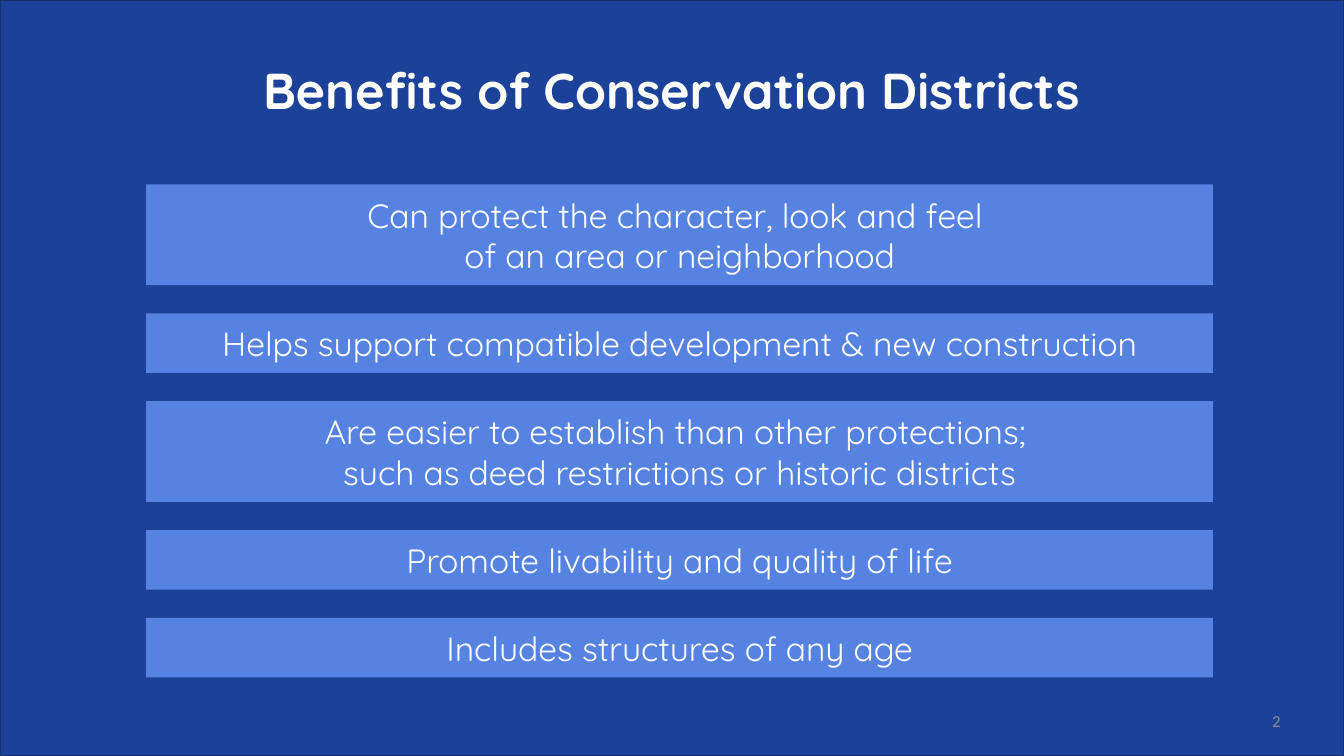
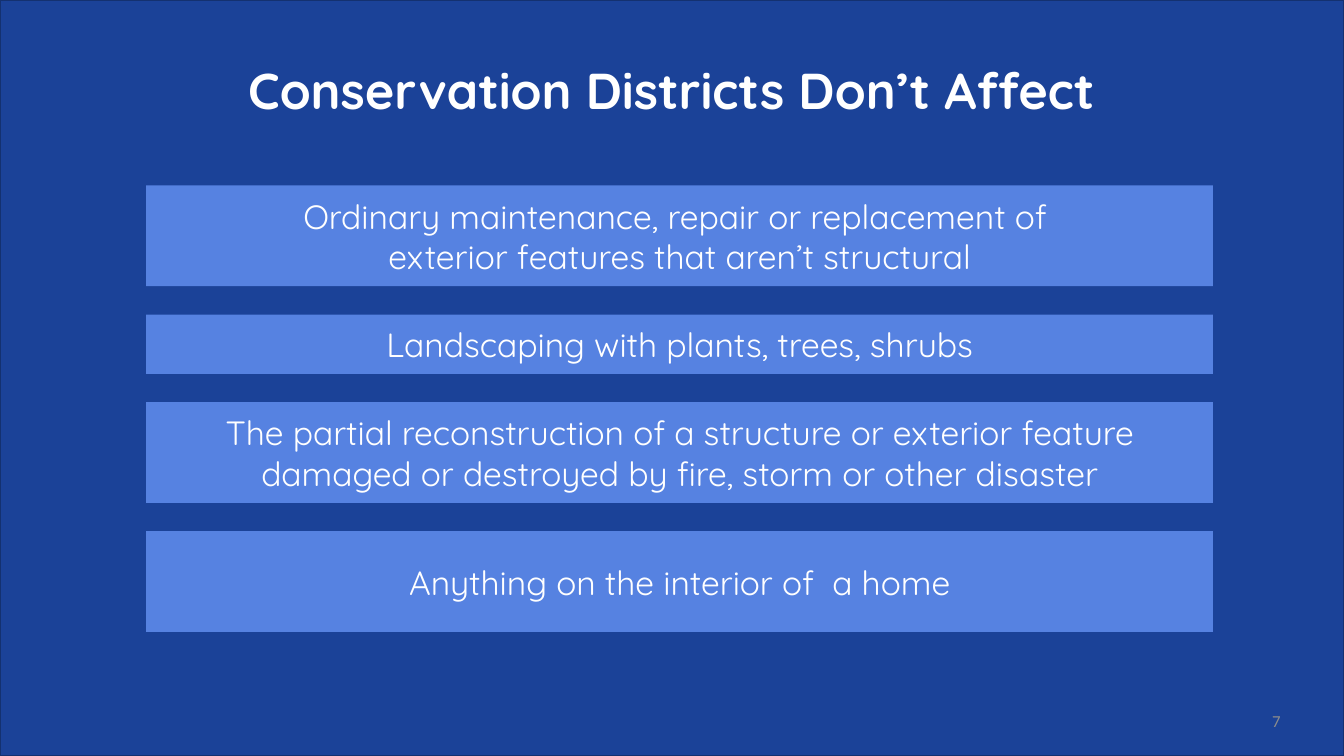
from pptx import Presentation
from pptx import util as u
from pptx.dml.color import RGBColor
from pptx.enum import shapes, text

W, H = 13.33, 7.5
NAVY, EDGE, BAND, WHITE, GREY = "1B4298", "143170", "5682E1", "FFFFFF", "8C8C8C"
HEAD_FONT, NUMBER_FONT = "Quicksand", "Calibri"

TITLE_BOX = (0.66, 0.49, 12, 0.87)
NUMBER_BOX = (9.8, 6.95, 3, 0.4)
BAND_LEFT, BAND_WIDTH, BAND_GAP = 1.45, 10.58, 0.28
TALL, SHORT = 1, 0.59

SLIDES = [
    ("Benefits of Conservation Districts", 2, 1.83, [
        (TALL, "Can protect the character, look and feel \nof an area or neighborhood"),
        (SHORT, "Helps support compatible development & new construction"),
        (TALL, "Are easier to establish than other protections; \n"
               "such as deed restrictions or historic districts"),
        (SHORT, "Promote livability and quality of life"),
        (SHORT, "Includes structures of any age"),
    ]),
    ("Conservation Districts Don’t Affect", 7, 1.84, [
        (TALL, "Ordinary maintenance, repair or replacement of \n"
               "exterior features that aren’t structural"),
        (SHORT, "Landscaping with plants, trees, shrubs"),
        (TALL, "The partial reconstruction of a structure or exterior feature "
               "damaged or destroyed by fire, storm or other disaster"),
        (TALL, "Anything on the interior of  a home"),
    ]),
]


def rgb(value):
    return RGBColor.from_string(value)


def inches(box):
    return [u.Inches(v) for v in box]


def write(sp, content, size=24, font=HEAD_FONT, color=WHITE, bold=False,
          align=text.PP_ALIGN.CENTER, spacing=None):
    """Fill a shape with one paragraph; a newline becomes a line break."""
    tf = sp.text_frame
    tf.word_wrap = True
    tf.vertical_anchor = text.MSO_ANCHOR.MIDDLE
    p = tf.paragraphs[0]
    p.text = content
    p.alignment = align
    p.line_spacing = spacing
    for r in p.runs:
        r.font.size = u.Pt(size)
        r.font.name = font
        r.font.bold = bold
        r.font.color.rgb = rgb(color)


def add_rect(s, box, fill, line=None):
    sp = s.shapes.add_shape(shapes.MSO_SHAPE.RECTANGLE, *inches(box))
    sp.shadow.inherit = False
    sp.fill.solid()
    sp.fill.fore_color.rgb = rgb(fill)
    if line:
        sp.line.color.rgb = rgb(line)
        sp.line.width = u.Pt(1)
    else:
        sp.line.fill.background()
    return sp


def add_text(s, box, content, **fmt):
    write(s.shapes.add_textbox(*inches(box)), content, **fmt)


def add_frame(s, title, number):
    """Place the backdrop, title and slide number that every slide shares."""
    add_rect(s, (0, 0, W, H), NAVY, EDGE)
    add_text(s, TITLE_BOX, title, size=36, bold=True, spacing=0.9)
    add_text(s, NUMBER_BOX, str(number), size=12, font=NUMBER_FONT,
             color=GREY, align=text.PP_ALIGN.RIGHT)


def add_bands(s, left, top, width, bands):
    """Stack the text bands downwards with equal gaps."""
    for height, content in bands:
        write(add_rect(s, (left, top, width, height), BAND), content)
        top += height + BAND_GAP


def main():
    prs = Presentation()
    prs.slide_width, prs.slide_height = inches((W, H))
    for title, number, top, bands in SLIDES:
        s = prs.slides.add_slide(prs.slide_layouts[6])
        add_frame(s, title, number)
        add_bands(s, BAND_LEFT, top, BAND_WIDTH, bands)
    prs.save("out.pptx")


if __name__ == "__main__":
    main()
